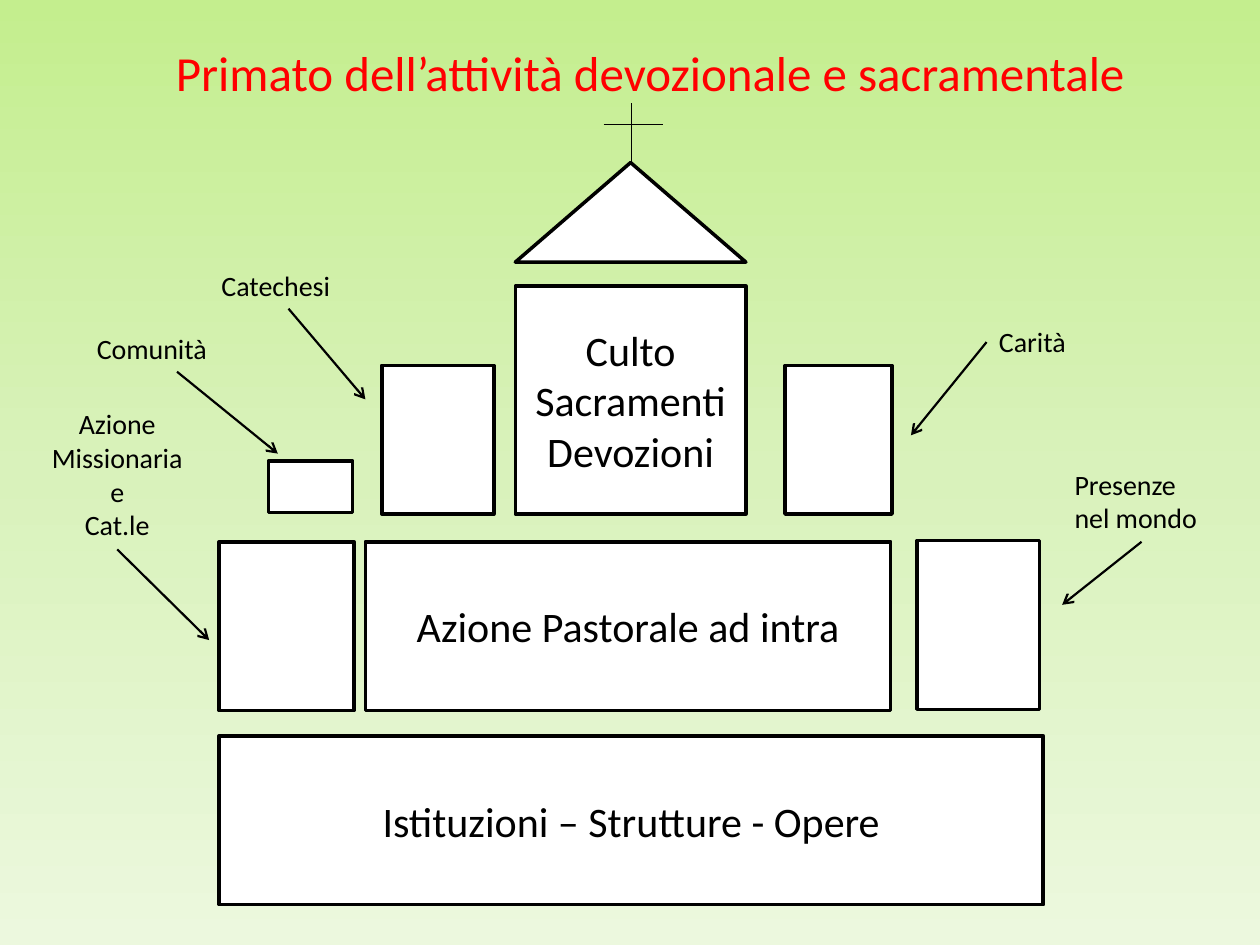
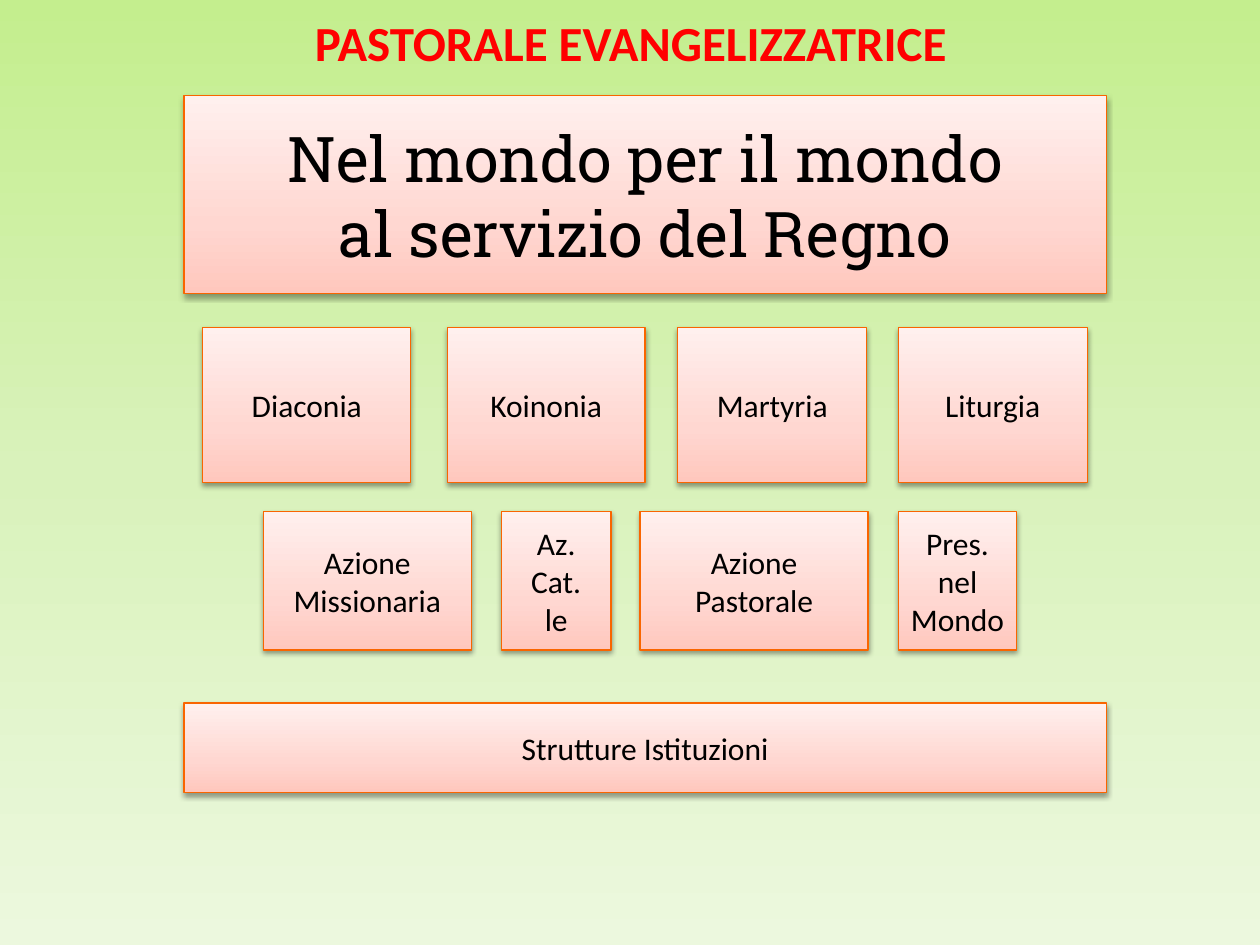
from dataclasses import dataclass

from lxml.etree import SubElement
from pptx import Presentation
from pptx.dml.color import RGBColor
from pptx.enum.shapes import MSO_CONNECTOR as Connector, MSO_SHAPE as Preset
from pptx.enum.text import MSO_ANCHOR as Anchor, MSO_AUTO_SIZE as AutoSize, PP_ALIGN as Align
from pptx.oxml.ns import qn
from pptx.util import Inches, Pt


@dataclass(frozen=True)
class Theme:
    ink: str = "000000"
    title: str = "FF0000"
    paper: str = "FFFFFF"
    edge: str = "F96500"
    sky: tuple = ((0, "C4EE8E"), (50, "D9F2BB"), (100, "ECF8DE"))
    blush: tuple = ((0, "FFC7BD"), (35, "FFD7D1"), (100, "FFF0EE"))
    sans: str = "Calibri"
    slab: str = "Roboto Slab"
    banner_size: int = 36
    title_size: int = 28
    church_size: int = 24
    card_size: int = 18
    label_size: int = 16
    wall_line: float = 2
    arrow_line: float = 1.25
    thin_line: float = 0.75


THEME = Theme()


@dataclass(frozen=True)
class Box:
    left: float
    top: float
    width: float
    height: float

    def inner(self, left, top, width, height):
        return Box(self.left + left, self.top + top, width, height)

    def point(self, x, y):
        return self.left + x, self.top + y

    def lengths(self):
        return [Inches(side) for side in (self.left, self.top, self.width, self.height)]


def write(frame, lines, size, color=THEME.ink, font=THEME.sans,
          align=Align.CENTER, anchor=Anchor.MIDDLE, bold=False):
    frame.word_wrap = True
    frame.vertical_anchor = anchor
    for index, line in enumerate(lines):
        paragraph = frame.add_paragraph() if index else frame.paragraphs[0]
        paragraph.alignment = align
        run = paragraph.add_run()
        run.text = line
        run.font.size = Pt(size)
        run.font.name = font
        run.font.bold = bold
        run.font.color.rgb = RGBColor.from_string(color)


def stroke(line, color, width):
    line.color.rgb = RGBColor.from_string(color)
    line.width = Pt(width)


def paint_gradient(fill, owner, stops, angle):
    fill.gradient()
    gradient = owner.find(".//" + qn("a:gradFill"))
    stop_list = gradient.find(qn("a:gsLst"))
    for old_stop in list(stop_list):
        stop_list.remove(old_stop)
    for position, color in stops:
        stop = SubElement(stop_list, qn("a:gs"), pos=str(position * 1000))
        SubElement(stop, qn("a:srgbClr"), val=color)
    gradient.find(qn("a:lin")).set("ang", str(angle * 60000))


def cast_shadow(shape):
    effects = shape._element.spPr.find(qn("a:effectLst"))
    shadow = SubElement(effects, qn("a:outerShdw"), blurRad=str(Pt(3.1)),
                        dist=str(Pt(1.6)), dir="5400000", rotWithShape="0")
    tint = SubElement(shadow, qn("a:srgbClr"), val=THEME.ink)
    SubElement(tint, qn("a:alpha"), val="38000")


def add_wall(slide, box, lines=(), preset=Preset.RECTANGLE):
    wall = slide.shapes.add_shape(preset, *box.lengths())
    wall.shadow.inherit = False
    wall.fill.solid()
    wall.fill.fore_color.rgb = RGBColor.from_string(THEME.paper)
    stroke(wall.line, THEME.ink, THEME.wall_line)
    write(wall.text_frame, lines, THEME.church_size)


def add_card(slide, box, lines, size=THEME.card_size, font=THEME.sans):
    card = slide.shapes.add_shape(Preset.RECTANGLE, *box.lengths())
    card.shadow.inherit = False
    paint_gradient(card.fill, card._element, THEME.blush, 270)
    stroke(card.line, THEME.edge, THEME.thin_line)
    cast_shadow(card)
    write(card.text_frame, lines, size, font=font)


def add_line(slide, start, end, width, arrow=False):
    ends = [Inches(value) for value in (*start, *end)]
    line = slide.shapes.add_connector(Connector.STRAIGHT, *ends)
    stroke(line.line, THEME.ink, width)
    properties = line._element.spPr
    if arrow:
        SubElement(properties.find(qn("a:ln")), qn("a:tailEnd"), type="arrow")
    SubElement(properties, qn("a:effectLst"))


def add_callout(slide, box, lines, reach, align=Align.LEFT, from_side=False):
    label = slide.shapes.add_textbox(*box.lengths())
    write(label.text_frame, lines, THEME.label_size, align=align, anchor=Anchor.TOP)
    label.text_frame.auto_size = AutoSize.SHAPE_TO_FIT_TEXT
    start = box.point(0, box.height / 2) if from_side else box.point(box.width / 2, box.height)
    end = start[0] + reach[0], start[1] + reach[1]
    add_line(slide, start, end, THEME.arrow_line, arrow=True)


def new_slide(deck, title, box, bold=False):
    slide = deck.slides.add_slide(deck.slide_layouts[5])
    paint_gradient(slide.background.fill, slide._element, THEME.sky, 90)
    heading = slide.shapes.title
    heading.left, heading.top, heading.width, heading.height = box.lengths()
    write(heading.text_frame, [title], THEME.title_size, THEME.title,
          anchor=Anchor.TOP, bold=bold)
    heading.text_frame.auto_size = AutoSize.NONE
    return slide


def draw_church(slide, box):
    add_wall(slide, box.inner(2.35, 1.45, 1.83, 1.81), ["Culto", "Sacramenti", "Devozioni"])
    add_wall(slide, box.inner(2.35, 0.47, 1.83, 0.79), preset=Preset.ISOSCELES_TRIANGLE)
    add_line(slide, box.point(3.27, 0), box.point(3.27, 0.47), THEME.thin_line)
    add_line(slide, box.point(3.05, 0.17), box.point(3.52, 0.17), THEME.thin_line)
    add_wall(slide, box.inner(1.16, 3.48, 4.17, 1.34), ["Azione Pastorale ad intra"])
    add_wall(slide, box.inner(0, 5.02, box.width, 1.34), ["Istituzioni – Strutture - Opere"])
    side_rooms = [
        (1.29, 2.08, 0.89, 1.18),
        (4.49, 2.08, 0.85, 1.18),
        (0, 3.48, 1.07, 1.34),
        (5.54, 3.47, 0.97, 1.34),
        (0.39, 2.84, 0.67, 0.41),
    ]
    for room in side_rooms:
        add_wall(slide, box.inner(*room))


def draw_callouts(slide, box):
    add_callout(slide, box.inner(7.54, 0.45, 1.18, 0.37), ["Carità"], (-0.6, 0.74),
                from_side=True)
    add_callout(slide, box.inner(1.37, 0, 1.26, 0.37), ["Catechesi"], (0.61, 0.72))
    add_callout(slide, box.inner(0.38, 0.5, 1.47, 0.37), ["Comunità"], (0.8, 0.65))
    add_callout(slide, box.inner(0, 1.1, 1.28, 1.18),
                ["Azione", "Missionaria", "e", "Cat.le"], (0.73, 0.72), Align.CENTER)
    add_callout(slide, box.inner(8.14, 1.58, 1.26, 0.64), ["Presenze", "nel mondo"],
                (-0.63, 0.5))


def draw_card_row(slide, box, cards):
    for left, width, lines in cards:
        add_card(slide, box.inner(left, 0, width, box.height), lines)


def draw_pastoral_plan(slide, box):
    add_card(slide, box.inner(0, 0, box.width, 1.57),
             ["Nel mondo per il mondo", "al servizio del Regno"],
             THEME.banner_size, THEME.slab)
    draw_card_row(slide, box.inner(0.15, 1.84, 7.02, 1.23), [
        (0, 1.65, ["Diaconia"]),
        (1.94, 1.57, ["Koinonia"]),
        (3.77, 1.5, ["Martyria"]),
        (5.52, 1.5, ["Liturgia"]),
    ])
    draw_card_row(slide, box.inner(0.63, 3.3, 5.98, 1.1), [
        (0, 1.65, ["Azione", "Missionaria"]),
        (1.89, 0.87, ["Az.", "Cat.", "le"]),
        (2.99, 1.81, ["Azione", "Pastorale"]),
        (5.04, 0.94, ["Pres.", "nel", "Mondo"]),
    ])
    add_card(slide, box.inner(0, 4.82, box.width, 0.71), ["Strutture Istituzioni"])


def main():
    deck = Presentation()
    deck.slide_width, deck.slide_height = Inches(10), Inches(7.5)

    devotion = new_slide(deck, "Primato dell’attività devozionale e sacramentale",
                         Box(0.75, 0.29, 8.82, 0.57))
    draw_church(devotion, Box(1.74, 0.82, 6.54, 6.36))
    draw_callouts(devotion, Box(0.29, 2.08, 9.4, 2.28))

    mission = new_slide(deck, "PASTORALE EVANGELIZZATRICE",
                        Box(0.83, 0.05, 8.35, 0.57), bold=True)
    draw_pastoral_plan(mission, Box(1.46, 0.76, 7.32, 5.53))

    deck.save("out.pptx")


if __name__ == "__main__":
    main()
